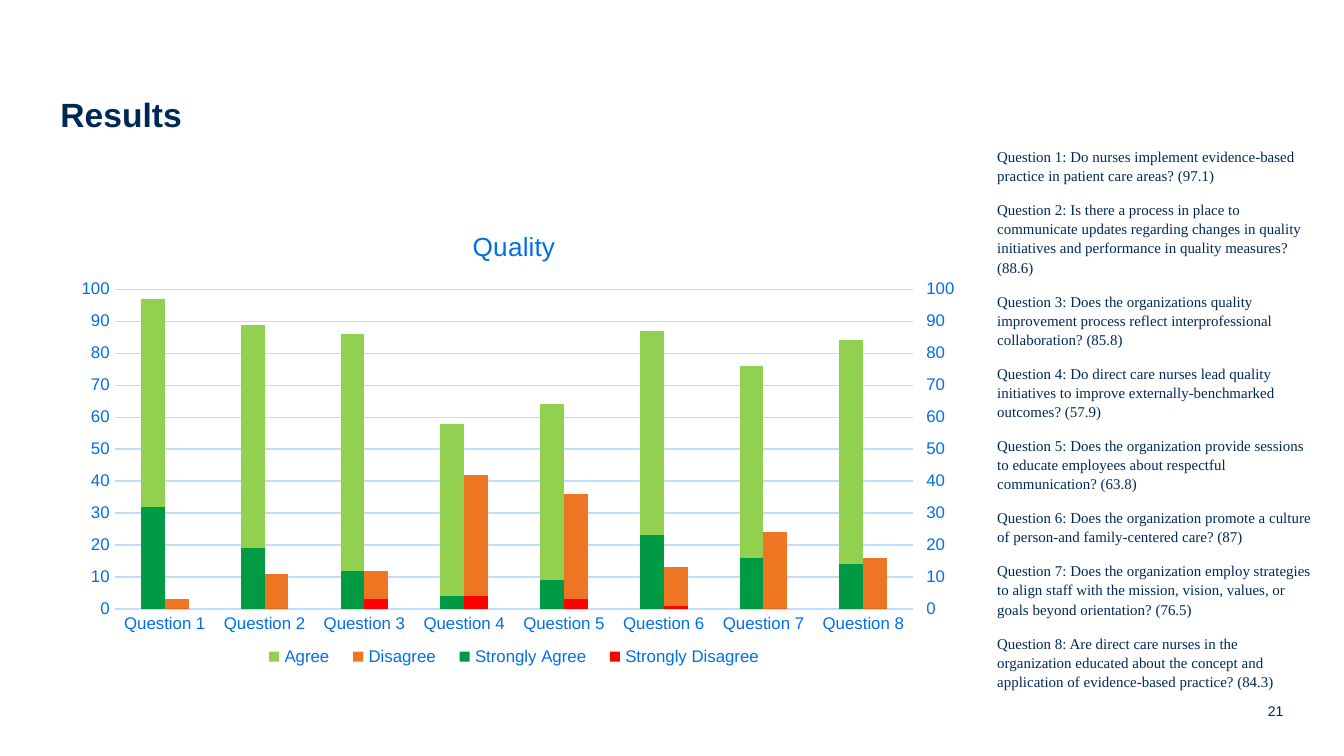
import copy

from lxml import etree
from pptx import Presentation, util as u
from pptx.chart.data import CategoryChartData
from pptx.dml.color import RGBColor
from pptx.enum import chart as ch, text
from pptx.oxml import parse_xml
from pptx.oxml.ns import nsdecls, qn

COLORS = {
    "navy": "002855", "blue": "006EEA", "grid": "BFDDFF",
    "Agree": "92D050", "Disagree": "EE7522",
    "Strongly Agree": "009A44", "Strongly Disagree": "FF0000",
}
ANSWERS = {
    "Agree": (97, 89, 86, 58, 64, 87, 76, 84),
    "Disagree": (3, 11, 12, 42, 36, 13, 24, 16),
    "Strongly Agree": (32, 19, 12, 4, 9, 23, 16, 14),
    "Strongly Disagree": (0, 0, 3, 4, 3, 1, 0, 0),
}
QUESTIONS = [
    "Do nurses implement evidence-based practice in patient care areas? (97.1)",
    "Is there a process in place to communicate updates regarding changes in quality "
    "initiatives and performance in quality measures? (88.6)",
    "Does the organizations quality improvement process reflect interprofessional "
    "collaboration? (85.8)",
    "Do direct care nurses lead quality initiatives to improve externally-benchmarked "
    "outcomes? (57.9)",
    "Does the organization provide sessions to educate employees about respectful "
    "communication? (63.8)",
    "Does the organization promote a culture of person-and family-centered care? (87)",
    "Does the organization employ strategies to align staff with the mission, vision, "
    "values, or goals beyond orientation? (76.5)",
    "Are direct care nurses in the organization educated about the concept and "
    "application of evidence-based practice? (84.3)",
]


def style_font(font, size, color, name="Arial", bold=False):
    font.size, font.name, font.bold = u.Pt(size), name, bold
    font.color.rgb = RGBColor.from_string(COLORS[color])


def add_text(box, lines, size, name="Arial", bold=False, wrap=True):
    """Add a navy text box without margins, one paragraph per line."""
    frame = slide.shapes.add_textbox(*map(u.Inches, box)).text_frame
    frame.margin_left = frame.margin_right = frame.margin_top = frame.margin_bottom = 0
    frame.word_wrap = wrap
    frame.text = "\n".join(lines)
    for paragraph in frame.paragraphs:
        style_font(paragraph.font, size, "navy", name, bold)
    return frame


prs = Presentation()
prs.slide_width = u.Inches(10)
prs.slide_height = prs.slide_width * 9 // 16
slide = prs.slides.add_slide(prs.slide_layouts[6])

add_text((0.45, 0.7, 9.1, 0.7), ["Results"], 18, bold=True)

page_number = add_text((9.25, 5.2, 0.3, 0.15), ["21"], 7.5, wrap=False)
page_number.vertical_anchor = text.MSO_ANCHOR.BOTTOM
page_number.paragraphs[0].alignment = text.PP_ALIGN.RIGHT

# Chart of the answers
data = CategoryChartData()
data.categories = [f"Question {n}" for n in range(1, len(QUESTIONS) + 1)]
for answer, percentages in ANSWERS.items():
    data.add_series(answer, percentages)
chart = slide.shapes.add_chart(
    ch.XL_CHART_TYPE.COLUMN_CLUSTERED,
    u.Inches(0.45), u.Inches(1.55), u.Inches(6.75), u.Inches(3.55), data).chart
style_font(chart.font, 10, "navy")

chart.has_title = True
chart.chart_title.include_in_layout = False
chart.chart_title.text_frame.text = "Quality"
style_font(chart.chart_title.text_frame.paragraphs[0].font, 14, "blue")

chart.has_legend = True
chart.legend.position = ch.XL_LEGEND_POSITION.BOTTOM
chart.legend.include_in_layout = False
style_font(chart.legend.font, 9, "blue")

questions_axis, percent_axis = chart.category_axis, chart.value_axis
for axis in (questions_axis, percent_axis):
    axis.major_tick_mark = axis.minor_tick_mark = ch.XL_TICK_MARK.NONE
    style_font(axis.tick_labels.font, 9, "blue")
percent_axis.minimum_scale, percent_axis.maximum_scale = 0, 100
percent_axis.major_unit = 10
percent_axis.has_major_gridlines = True
percent_axis.format.line.fill.background()
for line in (questions_axis.format.line, percent_axis.major_gridlines.format.line):
    line.color.rgb = RGBColor.from_string(COLORS["grid"])
    line.width = u.Pt(0.75)

plot = chart.plots[0]
plot.vary_by_categories = False
plot.gap_width, plot.overlap = 219, 0
for series in plot.series:
    series.format.fill.solid()
    series.format.fill.fore_color.rgb = RGBColor.from_string(COLORS[series.name])

# The "Strongly" series stand in front, on a second pair of axes
plot_area = chart.element.xpath("c:chart/c:plotArea")[0]
bars = plot_area.find(qn("c:barChart"))
strong_bars = copy.deepcopy(bars)
for group, hidden in ((bars, slice(2, 4)), (strong_bars, slice(0, 2))):
    for series in group.findall(qn("c:ser"))[hidden]:
        group.remove(series)
bars.addnext(strong_bars)

category_axis, left_axis = (plot_area.find(qn(f"c:{tag}")) for tag in ("catAx", "valAx"))
right_axis, hidden_axis = copy.deepcopy(left_axis), copy.deepcopy(category_axis)
left_axis.addnext(right_axis)
right_axis.addnext(hidden_axis)
for ref, axis_id in zip(strong_bars.findall(qn("c:axId")), ("5001", "5002")):
    ref.set("val", axis_id)
for axis, own, crossed in ((hidden_axis, "5001", "5002"), (right_axis, "5002", "5001")):
    axis.find(qn("c:axId")).set("val", own)
    axis.find(qn("c:crossAx")).set("val", crossed)
hidden_axis.find(qn("c:delete")).set("val", "1")
right_axis.remove(right_axis.find(qn("c:majorGridlines")))
right_axis.find(qn("c:axPos")).set("val", "r")
right_axis.find(qn("c:crosses")).set("val", "max")
right_axis.find(qn("c:majorTickMark")).set("val", "out")

# Places of the plot and the legend, as shares of the chart
legend = chart.legend._element
for part, position, target, box in (
        (plot_area, 0, "inner", (0.06, 0.17, 0.88, 0.67)),
        (legend, 1, None, (0.21, 0.9, 0.58, 0.08))):
    for old_layout in part.findall(qn("c:layout")):
        part.remove(old_layout)
    layout = parse_xml(f"<c:layout {nsdecls('c')}><c:manualLayout/></c:layout>")
    settings = [("layoutTarget", target)] if target else []
    settings += [("xMode", "edge"), ("yMode", "edge"), *zip("xywh", box)]
    for tag, value in settings:
        etree.SubElement(layout[0], qn(f"c:{tag}")).set("val", str(value))
    part.insert(position, layout)

# Wording of the questions
wording = add_text((7.42, 1.09, 2.36, 4.11),
                   [f"Question {n}: {q}" for n, q in enumerate(QUESTIONS, 1)],
                   8, "Times New Roman")
for paragraph in wording.paragraphs:
    paragraph.line_spacing = 1.07
    paragraph.space_after = u.Pt(8)

prs.save("out.pptx")
